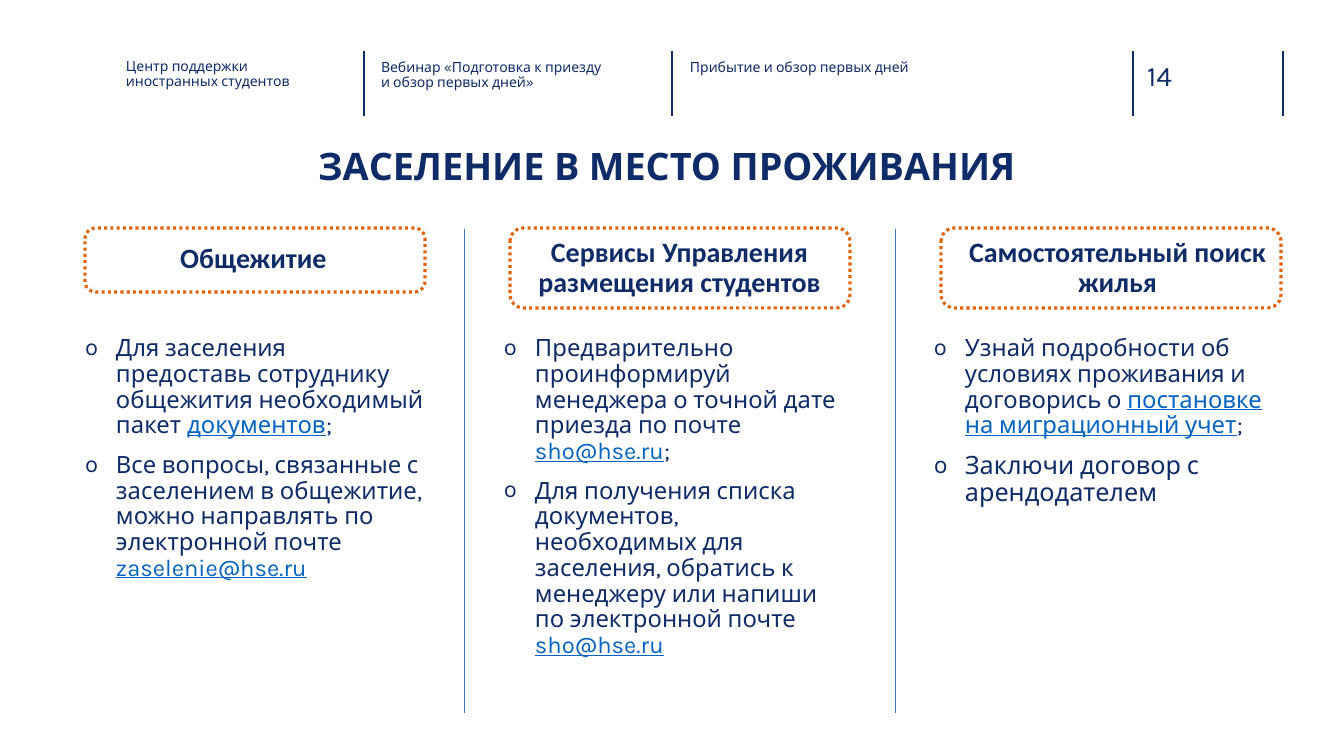
from lxml import etree
from pptx import Presentation
from pptx.dml.color import RGBColor
from pptx.enum.dml import MSO_LINE
from pptx.enum.shapes import MSO_CONNECTOR, MSO_SHAPE
from pptx.enum.text import MSO_ANCHOR, MSO_AUTO_SIZE, PP_ALIGN
from pptx.oxml.ns import qn
from pptx.util import Pt

PX = 12192000 / 1344
STRAIGHT = MSO_CONNECTOR.STRAIGHT
ROUNDED = MSO_SHAPE.ROUNDED_RECTANGLE
DOTTED = MSO_LINE.ROUND_DOT
TOP, MIDDLE = MSO_ANCHOR.TOP, MSO_ANCHOR.MIDDLE
LEFT, CENTER = PP_ALIGN.LEFT, PP_ALIGN.CENTER
NO_AUTOFIT = MSO_AUTO_SIZE.NONE
COMPARISON_LAYOUT = 4
COLORS = {"navy": "0F2C68", "link": "0563C1", "frame": "E0640C", "divider": "4472C4"}

HEADER_RULES = (364, 672, 1133, 1283)
HEADER_TEXTS = [
    ((126, 59, 210, 45), "Центр поддержки иностранных студентов"),
    ((381, 60, 228, 45), "Вебинар «Подготовка к приезду и обзор первых дней»"),
    ((690, 60, 228, 45), "Прибытие и обзор первых дней"),
]
COLUMNS = [
    {
        "placeholder": 1,
        "frame": (85, 228, 340, 64),
        "heading_box": (100, 239, 307, 50),
        "heading": "Общежитие",
        "list_box": (85, 336, 340, 377),
        "items": [
            (17, "Для заселения предоставь сотруднику общежития необходимый пакет ",
             "документов", ";"),
            (17, "Все вопросы, связанные с заселением в общежитие, можно направлять "
             "по электронной почте ", "zaselenie@hse.ru", ""),
        ],
    },
    {
        "placeholder": 2,
        "frame": (510, 228, 340, 80),
        "heading_box": (526, 233, 307, 44),
        "heading": "Сервисы Управления размещения студентов",
        "list_box": (504, 336, 337, 377),
        "items": [
            (17, "Предварительно проинформируй менеджера о точной дате приезда по почте ",
             "sho@hse.ru", ";"),
            (17, "Для получения списка документов, необходимых для заселения, обратись "
             "к менеджеру или напиши по электронной почте ", "sho@hse.ru", ""),
        ],
    },
    {
        "placeholder": 4,
        "frame": (941, 228, 340, 80),
        "heading_box": (940, 233, 355, 70),
        "heading": "Самостоятельный поиск жилья",
        "list_box": (934, 336, 353, 377),
        "items": [
            (17, "Узнай подробности об условиях проживания и договорись о ",
             "постановке на миграционный учет", ";"),
            (18, "Заключи договор с арендодателем", "", ""),
        ],
    },
]


def emu(box):
    """Turn px lengths into EMU."""
    return [round(length * PX) for length in box]


def color(name):
    """Look up a named colour."""
    return RGBColor.from_string(COLORS[name])


def place(shape, box):
    """Move a shape to its box."""
    shape.left, shape.top, shape.width, shape.height = emu(box)


def prepare_frame(shape, inset=0, anchor=TOP):
    """Set wrapping, insets and anchor, and return the text frame."""
    frame = shape.text_frame
    frame.word_wrap = True
    frame.auto_size = NO_AUTOFIT
    frame.vertical_anchor = anchor
    frame.margin_left = frame.margin_right = round(2 * inset * PX)
    frame.margin_top = frame.margin_bottom = round(inset * PX)
    return frame


def format_paragraph(paragraph, size, name="Karla", bold=False, align=LEFT, spacing=0.9):
    """Set the alignment, spacing and font of a paragraph."""
    paragraph.alignment = align
    paragraph.line_spacing = spacing
    font = paragraph.font
    font.name, font.size, font.bold = name, Pt(size), bold
    font.color.rgb = color("navy")


def add_text(slide, box, text, size, inset=0, **style):
    """Add a text box with one paragraph."""
    frame = prepare_frame(slide.shapes.add_textbox(*emu(box)), inset)
    frame.text = text
    format_paragraph(frame.paragraphs[0], size, **style)


def add_rule(slide, x, top, bottom, color_name, weight):
    """Draw a vertical line."""
    line = slide.shapes.add_connector(STRAIGHT, *emu((x, top, x, bottom)))
    line.line.color.rgb = color(color_name)
    line.line.width = Pt(weight)
    etree.SubElement(line._element.spPr, qn("a:effectLst"))


def add_header(slide):
    """Build the running header with its rules and page number."""
    for x in HEADER_RULES:
        add_rule(slide, x, 51, 116, "navy", 1)
    for box, text in HEADER_TEXTS:
        add_text(slide, box, text, 10)
    add_text(slide, (1147, 58, 74, 34), "14", 20, spacing=1.0)


def fill_title(slide, box):
    """Place and format the slide title."""
    title = slide.shapes.title
    place(title, box)
    frame = prepare_frame(title, anchor=MIDDLE)
    frame.text = "ЗАСЕЛЕНИЕ В МЕСТО ПРОЖИВАНИЯ "
    format_paragraph(frame.paragraphs[0], 27, bold=True, align=CENTER)


def add_bullet(paragraph):
    """Give a paragraph a hanging round bullet."""
    properties = paragraph._p.get_or_add_pPr()
    indent = round(31 * PX)
    properties.set("marL", str(indent))
    properties.set("indent", str(-indent))
    etree.SubElement(properties, qn("a:buFont"), typeface="Karla")
    etree.SubElement(properties, qn("a:buChar"), char="o")


def fill_list(placeholder, box, items):
    """Fill a body placeholder with bulleted items and their links."""
    place(placeholder, box)
    frame = prepare_frame(placeholder)
    for index, (size, lead, link, tail) in enumerate(items):
        paragraph = frame.add_paragraph() if index else frame.paragraphs[0]
        add_bullet(paragraph)
        paragraph.space_before = Pt(10 if index else 0)
        format_paragraph(paragraph, size)
        for text in filter(None, (lead, link, tail)):
            run = paragraph.add_run()
            run.text = text
            if text == link:
                run.font.underline = True
                run.font.color.rgb = color("link")


def add_column(slide, column):
    """Build one column: dotted frame, heading and list."""
    outline = slide.shapes.add_shape(ROUNDED, *emu(column["frame"]))
    outline.shadow.inherit = False
    outline.fill.background()
    outline.line.color.rgb = color("frame")
    outline.line.width = Pt(2.25)
    outline.line.dash_style = DOTTED
    add_text(slide, column["heading_box"], column["heading"], 20, inset=5,
             name="Calibri", bold=True, align=CENTER)
    fill_list(slide.placeholders[column["placeholder"]], column["list_box"], column["items"])


def main():
    """Build and save the presentation."""
    presentation = Presentation()
    presentation.slide_width, presentation.slide_height = emu((1344, 756))
    slide = presentation.slides.add_slide(presentation.slide_layouts[COMPARISON_LAYOUT])
    add_header(slide)
    fill_title(slide, (242, 141, 859, 55))
    for column in COLUMNS:
        add_column(slide, column)
    for x in (464, 895):
        add_rule(slide, x, 229, 713, "divider", 0.5)
    unused = slide.placeholders[3]._element
    unused.getparent().remove(unused)
    presentation.save("out.pptx")


if __name__ == "__main__":
    main()
